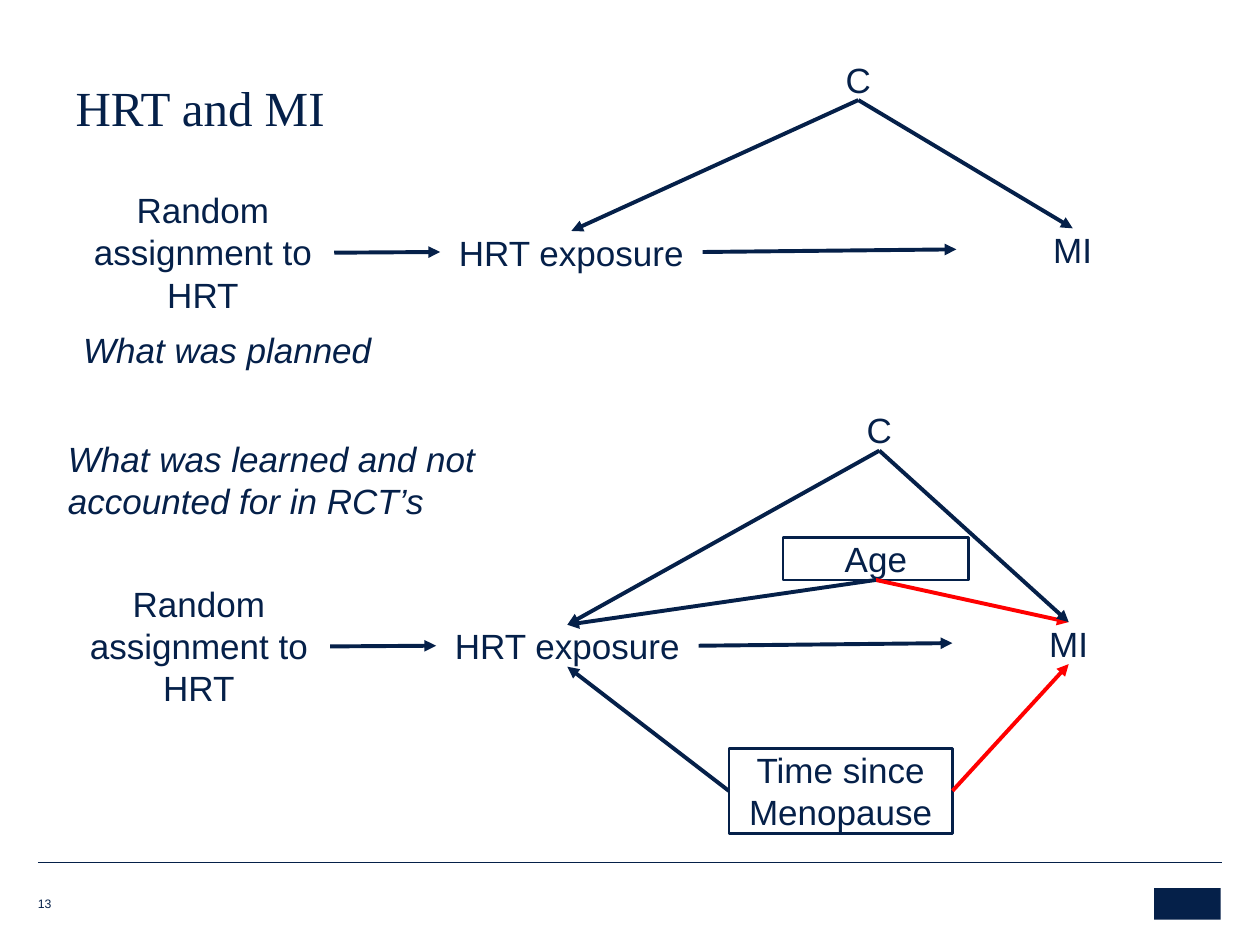
"""Build a slide with two causal diagrams of HRT and MI, as planned and as learned."""
from lxml import etree
from pptx import Presentation
from pptx.dml.color import RGBColor
from pptx.enum.shapes import MSO_CONNECTOR, MSO_SHAPE
from pptx.enum.text import MSO_ANCHOR, MSO_AUTO_SIZE, PP_ALIGN
from pptx.oxml.ns import qn
from pptx.util import Pt

STRAIGHT = MSO_CONNECTOR.STRAIGHT
RECTANGLE = MSO_SHAPE.RECTANGLE
LEFT, CENTER = PP_ALIGN.LEFT, PP_ALIGN.CENTER
TOP, BOTTOM = MSO_ANCHOR.TOP, MSO_ANCHOR.BOTTOM
NO_AUTOFIT = MSO_AUTO_SIZE.NONE
SITES = {"top": 0, "left": 1, "bottom": 2, "right": 3}

COLORS = {"navy": "052049", "red": "FF0000"}
TITLE = ("HRT and MI", (36, 33, 643.5, 48.5))
SLIDE_NUMBER = ("13", (21.6, 508.5, 19.5, 12))
LOGO_BOX = (659.5, 507.5, 38, 18)
FOOTER_RULE = (21.6, 492.5, 698.4, 492.5)
CAPTIONS = [
    ("What was planned", (47.5, 187.5, 365, 24)),
    ("What was learned and not accounted for in RCT’s", (38.8, 250, 301, 48.5)),
]
ROW_NODES = {
    "assignment": ("Random assignment to HRT", (41, 108, 150, 72.8)),
    "exposure": ("HRT exposure", (251.5, 132, 150, 24)),
    "outcome": ("MI", (546.5, 130.5, 133, 24)),
}
ROW_LINKS = [
    ("assignment", "right", "exposure", "left", "navy"),
    ("exposure", "right", "outcome", "left", "navy"),
]
CONFOUNDER_LINKS = [
    ("confounder", "bottom", "exposure", "top", "navy"),
    ("confounder", "bottom", "outcome", "top", "navy"),
]
DIAGRAMS = [
    {
        "offset": (0, 0),
        "nodes": {"confounder": ("C", (436.5, 33.2, 108, 24))},
        "boxes": {},
        "links": [],
    },
    {
        "offset": (-2.3, 225),
        "nodes": {"confounder": ("C", (448.5, 233.5, 108, 24))},
        "boxes": {
            "age": ("Age", (447.5, 307.2, 106, 24.2)),
            "menopause": ("Time since Menopause", (416.5, 427.7, 127.8, 48.5)),
        },
        "links": [
            ("age", "bottom", "outcome", "top", "red"),
            ("menopause", "right", "outcome", "bottom", "red"),
            ("age", "bottom", "exposure", "top", "navy"),
            ("menopause", "left", "exposure", "bottom", "navy"),
        ],
    },
]


def color(name):
    return RGBColor.from_string(COLORS[name])


def points(values):
    return [Pt(value) for value in values]


def write(shape, text, size=20, font="Arial", align=CENTER, anchor=TOP, italic=False, inset=0):
    frame = shape.text_frame
    frame.text = text
    frame.word_wrap = True
    frame.auto_size = NO_AUTOFIT
    frame.vertical_anchor = anchor
    frame.margin_left = frame.margin_right = Pt(inset)
    frame.margin_top = frame.margin_bottom = Pt(inset / 2)
    paragraph = frame.paragraphs[0]
    paragraph.alignment = align
    paragraph.font.size = Pt(size)
    paragraph.font.name = font
    paragraph.font.italic = italic
    paragraph.font.color.rgb = color("navy")
    return paragraph


def add_text(slide, text, box, **style):
    shape = slide.shapes.add_textbox(*points(box))
    write(shape, text, **style)
    return shape


def add_box(slide, text, box):
    shape = slide.shapes.add_shape(RECTANGLE, *points(box))
    shape.shadow.inherit = False
    shape.fill.background()
    shape.line.color.rgb = color("navy")
    shape.line.width = Pt(1.5)
    write(shape, text)
    return shape


def add_line(slide, ends, color_name, width):
    connector = slide.shapes.add_connector(STRAIGHT, *points(ends))
    connector.line.color.rgb = color(color_name)
    connector.line.width = Pt(width)
    etree.SubElement(connector._element.spPr, qn("a:effectLst"))
    return connector


def add_arrow(slide, source, source_side, target, target_side, color_name):
    connector = add_line(slide, (0, 0, 0, 0), color_name, 2.25)
    connector.begin_connect(source, SITES[source_side])
    connector.end_connect(target, SITES[target_side])
    etree.SubElement(connector.line._get_or_add_ln(), qn("a:tailEnd"), type="triangle")


def add_diagram(slide, diagram):
    across, down = diagram["offset"]
    shapes = {}
    for key, (text, (left, top, width, height)) in ROW_NODES.items():
        shapes[key] = add_text(slide, text, (left + across, top + down, width, height))
    for key, (text, box) in diagram["nodes"].items():
        shapes[key] = add_text(slide, text, box)
    for key, (text, box) in diagram["boxes"].items():
        shapes[key] = add_box(slide, text, box)
    for source, source_side, target, target_side, name in ROW_LINKS + diagram["links"] + CONFOUNDER_LINKS:
        add_arrow(slide, shapes[source], source_side, shapes[target], target_side, name)


def main():
    presentation = Presentation()
    presentation.slide_width, presentation.slide_height = Pt(720), Pt(540)
    slide = presentation.slides.add_slide(presentation.slide_layouts[5])

    text, box = TITLE
    title = slide.shapes.title
    title.left, title.top, title.width, title.height = points(box)
    paragraph = write(title, text, 28, "Times New Roman", LEFT, BOTTOM, inset=7.2)
    paragraph.line_spacing = 0.85

    add_line(slide, FOOTER_RULE, "navy", 0.25)
    logo = slide.shapes.add_shape(RECTANGLE, *points(LOGO_BOX))
    logo.shadow.inherit = False
    logo.fill.solid()
    logo.fill.fore_color.rgb = color("navy")
    logo.line.fill.background()
    add_text(slide, *SLIDE_NUMBER, size=7, align=LEFT, anchor=BOTTOM)

    for diagram in DIAGRAMS:
        add_diagram(slide, diagram)
    for caption, box in CAPTIONS:
        add_text(slide, caption, box, align=LEFT, italic=True)

    presentation.save("out.pptx")


if __name__ == "__main__":
    main()
